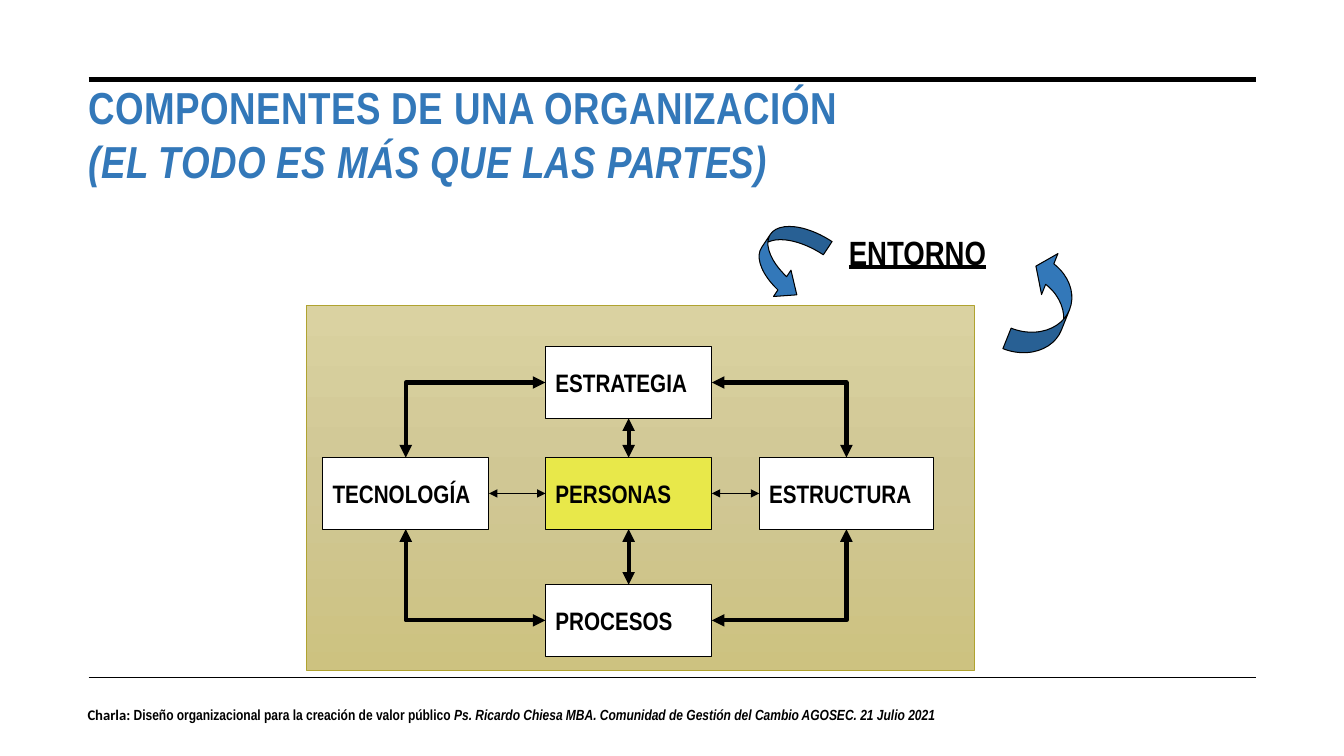
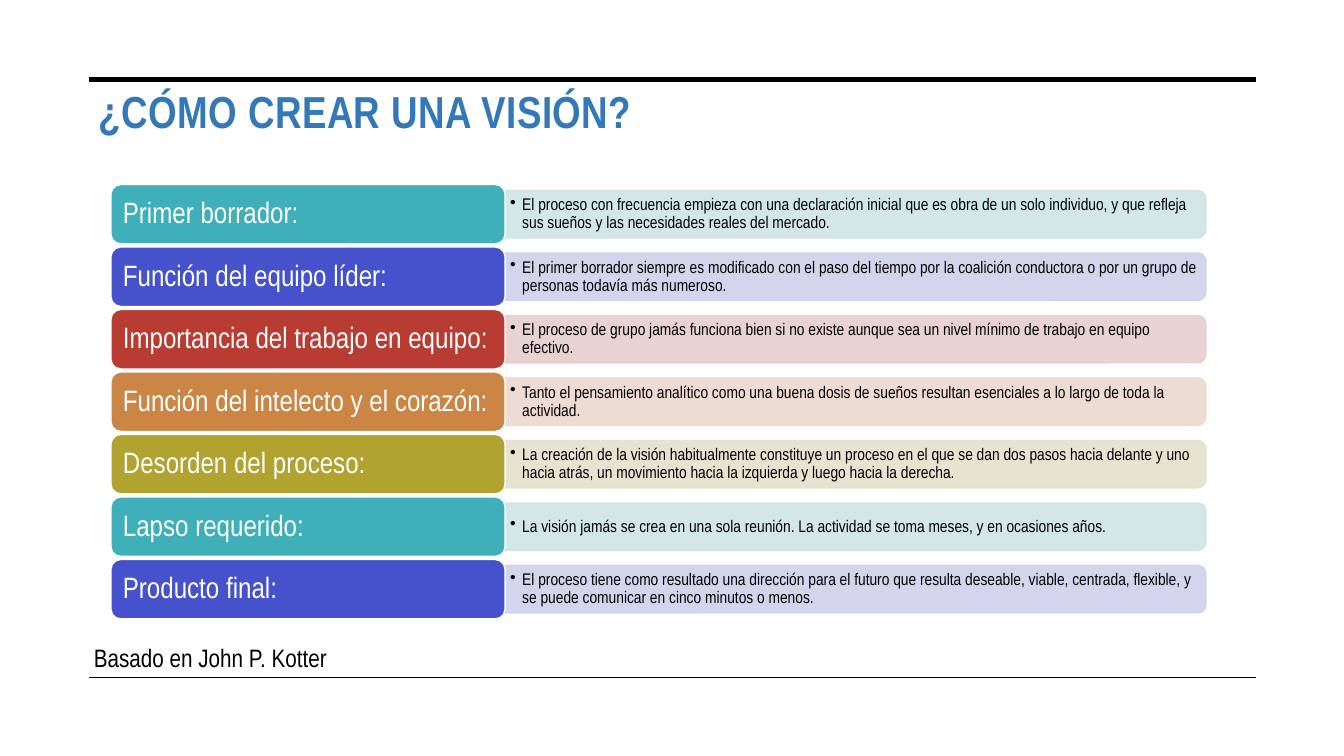
from copy import deepcopy
from dataclasses import dataclass
from itertools import cycle
from lxml.etree import SubElement
from pptx import Presentation
from pptx.dml.color import RGBColor
from pptx.enum.shapes import MSO_CONNECTOR, MSO_SHAPE
from pptx.enum.text import MSO_ANCHOR, MSO_AUTO_SIZE, PP_ALIGN
from pptx.oxml.ns import qn
from pptx.util import Inches, Pt


@dataclass(frozen=True)
class Theme:
    font: str = "Arial Narrow"
    alt: str = "Calibri"
    ink: str = "000000"
    paper: str = "FFFFFF"
    blue: str = "3378B9"
    gold: str = "E8E84A"
    olive: str = "B0A330"
    sand: tuple = ("DAD2A1", "D0C794", "CDC280")
    tones: tuple = (
        ("3FB0B9", "CFE4E6"),
        ("4552CB", "CFD1EC"),
        ("B93C33", "E6CECE"),
        ("CB8645", "ECD9CF"),
        ("B0A330", "E4E0CD"),
    )
    head: float = 32
    large: float = 24
    label: float = 21
    body: float = 18
    small: float = 12
    foot: float = 10.5


theme = Theme()


def style(shape, size, color=theme.ink, bold=False):
    for para in shape.text_frame.paragraphs:
        for run in para.runs:
            run.font.name = theme.font
            run.font.size = Pt(size)
            run.font.bold = bold
            run.font.color.rgb = RGBColor.from_string(color)


def paint(shape, edge, width, fill=None):
    if fill:
        shape.fill.solid()
        shape.fill.fore_color.rgb = RGBColor.from_string(fill)
    shape.line.color.rgb = RGBColor.from_string(edge)
    shape.line.width = Pt(width)
    SubElement(shape.element.spPr, qn("a:effectLst"))


deck = Presentation()
deck.slide_width, deck.slide_height = Inches(13.33), Inches(7.5)

slides = []
for text, left, top, high in (
    ("COMPONENTES DE UNA ORGANIZACIÓN\v(EL TODO ES MÁS QUE LAS PARTES)", 0.78, 0.74, 1.5),
    ("¿CÓMO CREAR UNA VISIÓN?", 0.88, 0.78, 1),
):
    slide = deck.slides.add_slide(deck.slide_layouts[5])
    slides.append(slide)
    for y, width in ((0.79, 3.5), (6.72, 1)):
        rule = slide.shapes.add_connector(
            MSO_CONNECTOR.STRAIGHT, Inches(0.88), Inches(y), Inches(12.46), Inches(y))
        paint(rule, theme.ink, width)
    title = slide.shapes.title
    title.left, title.top = Inches(left), Inches(top)
    title.width, title.height = Inches(11.6), Inches(high)
    frame = title.text_frame
    frame.text = text
    frame.auto_size = MSO_AUTO_SIZE.NONE
    frame.vertical_anchor = MSO_ANCHOR.TOP
    para = frame.paragraphs[0]
    para.alignment = PP_ALIGN.LEFT
    style(title, theme.head, theme.blue, True)
    for i, run in enumerate(para.runs):
        run.font.italic = i == 1
        run.font._element.set("spc", "30")

shapes = slides[0].shapes

foot = shapes.add_textbox(Inches(0.77), Inches(6.95), Inches(9.53), Inches(0.47))
foot.text_frame.word_wrap = True
para = foot.text_frame.paragraphs[0]
for text in (
    "Charla: ",
    "Diseño organizacional para la creación de valor público ",
    "Ps. Ricardo Chiesa MBA. Comunidad de Gestión del Cambio AGOSEC. 21 Julio 2021",
):
    para.add_run().text = text
style(foot, theme.foot, bold=True)
para.runs[0].font.name = theme.alt
para.runs[2].font.italic = True

panel = shapes.add_shape(
    MSO_SHAPE.RECTANGLE, Inches(3.04), Inches(3.03), Inches(6.62), Inches(3.62))
paint(panel, theme.olive, 0.5)
panel.fill.gradient()
panel.fill.gradient_angle = 270
stops = panel.element.spPr.find(".//" + qn("a:gsLst"))
stops.insert(1, deepcopy(stops[0]))
for i, stop in enumerate(panel.fill.gradient_stops):
    stop.color.rgb = RGBColor.from_string(theme.sand[i])
    stop.position = i / 2

world = shapes.add_textbox(Inches(8.32), Inches(2.25), Inches(2.28), Inches(0.5))
world.text_frame.word_wrap = True
world.text_frame.text = "ENTORNO"
style(world, theme.large, bold=True)
world.text_frame.paragraphs[0].runs[0].font.underline = True

for kind, place, turn, bends in (
    (MSO_SHAPE.CURVED_RIGHT_ARROW, (7.53, 2.18, 0.55, 0.79), 33.5, (0.285, 0.57, 0.333)),
    (MSO_SHAPE.CURVED_UP_ARROW, (9.82, 2.8, 1.1, 0.47), 291.8, (0.465, 0.93, 0.333)),
):
    arrow = shapes.add_shape(kind, *map(Inches, place))
    arrow.rotation = turn
    for i, bend in enumerate(bends):
        arrow.adjustments[i] = bend
    paint(arrow, theme.ink, 0.75, theme.blue)

boxes = {}
for text, left, top, wide, fill in (
    ("ESTRATEGIA", 5.41, 3.44, 1.65, theme.paper),
    ("PERSONAS", 5.41, 4.54, 1.65, theme.gold),
    ("ESTRUCTURA", 7.53, 4.54, 1.73, theme.paper),
    ("PROCESOS", 5.41, 5.8, 1.65, theme.paper),
    ("TECNOLOGÍA", 3.2, 4.54, 1.65, theme.paper),
):
    box = shapes.add_shape(
        MSO_SHAPE.RECTANGLE, Inches(left), Inches(top), Inches(wide), Inches(0.71))
    paint(box, theme.ink, 0.75, fill)
    box.text_frame.text = text
    box.text_frame.word_wrap = False
    style(box, theme.body, bold=True)
    boxes[text] = box

for start, out, end, into, width in (
    ("ESTRATEGIA", 1, "TECNOLOGÍA", 0, 3),
    ("PROCESOS", 1, "TECNOLOGÍA", 2, 3),
    ("ESTRATEGIA", 3, "ESTRUCTURA", 0, 3),
    ("PROCESOS", 3, "ESTRUCTURA", 2, 3),
    ("PERSONAS", 2, "PROCESOS", 0, 3),
    ("PERSONAS", 0, "ESTRATEGIA", 2, 3),
    ("TECNOLOGÍA", 3, "PERSONAS", 1, 0.75),
    ("PERSONAS", 3, "ESTRUCTURA", 1, 0.75),
):
    bent = out % 2 != into % 2
    link = shapes.add_connector(
        MSO_CONNECTOR.ELBOW if bent else MSO_CONNECTOR.STRAIGHT, 0, 0, 0, 0)
    link.begin_connect(boxes[start], out)
    link.end_connect(boxes[end], into)
    paint(link, theme.ink, width)
    spot = link.element.spPr
    if bent:
        spot.find(qn("a:prstGeom")).set("prst", "bentConnector2")
    for tip in ("a:headEnd", "a:tailEnd"):
        SubElement(spot.find(qn("a:ln")), qn(tip), type="triangle")

shapes = slides[1].shapes
steps = (
    ("Primer borrador:", "El proceso con frecuencia empieza con una declaración inicial que es obra de un solo individuo, y que refleja sus sueños y las necesidades reales del mercado."),
    ("Función del equipo líder:", "El primer borrador siempre es modificado con el paso del tiempo por la coalición conductora o por un grupo de personas todavía más numeroso."),
    ("Importancia del trabajo en equipo:", "El proceso de grupo jamás funciona bien si no existe aunque sea un nivel mínimo de trabajo en equipo efectivo."),
    ("Función del intelecto y el corazón:", "Tanto el pensamiento analítico como una buena dosis de sueños resultan esenciales a lo largo de toda la actividad."),
    ("Desorden del proceso:", "La creación de la visión habitualmente constituye un proceso en el que se dan dos pasos hacia delante y uno hacia atrás, un movimiento hacia la izquierda y luego hacia la derecha."),
    ("Lapso requerido:", "La visión jamás se crea en una sola reunión. La actividad se toma meses, y en ocasiones años."),
    ("Producto final:", "El proceso tiene como resultado una dirección para el futuro que resulta deseable, viable, centrada, flexible, y se puede comunicar en cinco minutos o menos."),
)
for i, ((name, text), (dark, pale)) in enumerate(zip(steps, cycle(theme.tones))):
    top = 1.83 + 0.62 * i
    band = shapes.add_shape(
        MSO_SHAPE.ROUND_2_SAME_RECTANGLE,
        Inches(8.25), Inches(top - 3.18), Inches(0.47), Inches(6.95))
    band.rotation = 90
    paint(band, pale, 1, pale)
    for tint in band.element.spPr.iter(qn("a:srgbClr")):
        SubElement(tint, qn("a:alpha"), val="90000")

    note = shapes.add_textbox(Inches(5.01), Inches(top + 0.08), Inches(6.93), Inches(0.43))
    frame = note.text_frame
    frame.word_wrap = True
    frame.vertical_anchor = MSO_ANCHOR.MIDDLE
    frame.margin_left = frame.margin_right = Inches(0.05)
    frame.margin_top = frame.margin_bottom = Inches(0.03)
    frame.text = text
    para = frame.paragraphs[0]
    para.line_spacing = 0.9
    props = para._p.get_or_add_pPr()
    props.set("marL", str(Inches(0.12)))
    props.set("indent", str(Inches(-0.12)))
    SubElement(props, qn("a:buChar"), char="•")
    style(note, theme.small)

    tag = shapes.add_shape(
        MSO_SHAPE.ROUNDED_RECTANGLE, Inches(1.1), Inches(top), Inches(3.91), Inches(0.59))
    paint(tag, theme.paper, 1, dark)
    frame = tag.text_frame
    frame.margin_left = frame.margin_right = Inches(0.09)
    frame.text = name
    frame.paragraphs[0].line_spacing = 0.9
    style(tag, theme.label, theme.paper)

credit = shapes.add_textbox(Inches(0.7), Inches(6.32), Inches(2.64), Inches(0.4))
credit.text_frame.word_wrap = True
credit.text_frame.text = "Basado en John P. Kotter"
credit.text_frame.paragraphs[0].alignment = PP_ALIGN.RIGHT
style(credit, theme.body)

deck.save("out.pptx")
